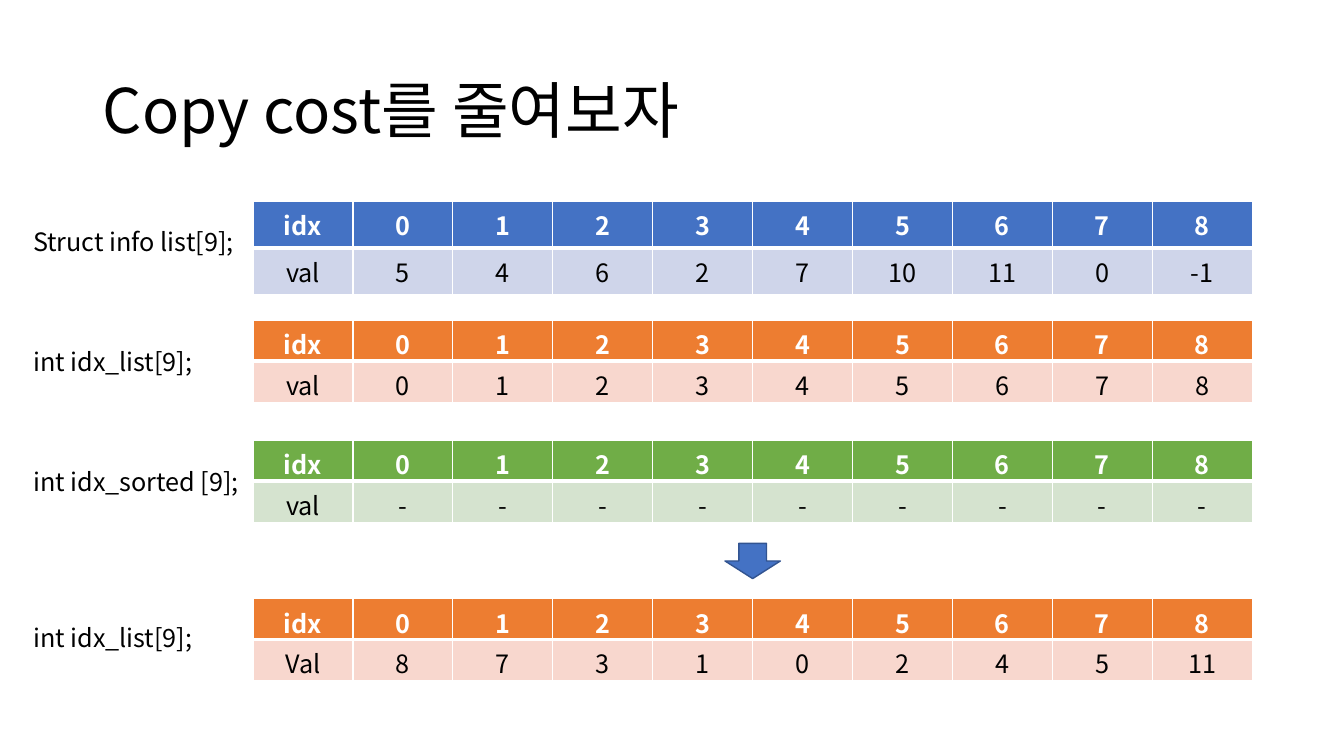
"""Build the slide on reducing copy cost by sorting an index list."""
from lxml import etree
from pptx import Presentation, util as u
from pptx.dml.color import RGBColor
from pptx.enum import shapes, text
from pptx.oxml.ns import qn

FONT = "Noto Sans CJK KR"
WHITE = RGBColor(0xFF, 0xFF, 0xFF)
BLACK = RGBColor(0, 0, 0)
BLUE = RGBColor(0x44, 0x72, 0xC4)
PALE_BLUE = RGBColor(0xCF, 0xD5, 0xEA)
DARK_BLUE = RGBColor(0x32, 0x54, 0x91)
ORANGE = RGBColor(0xED, 0x7D, 0x31)
PALE_ORANGE = RGBColor(0xF8, 0xD7, 0xCE)
GREEN = RGBColor(0x70, 0xAD, 0x47)
PALE_GREEN = RGBColor(0xD5, 0xE3, 0xCF)

HEADER = ["idx", *"012345678"]
ARRAYS = [
    ("Struct info list[9];", 2.2, 2.0, BLUE, PALE_BLUE,
     ["val", "5", "4", "6", "2", "7", "10", "11", "0", "-1"]),
    ("int idx_list[9];", 3.39, 3.18, ORANGE, PALE_ORANGE, ["val", *"012345678"]),
    ("int idx_sorted [9];", 4.58, 4.37, GREEN, PALE_GREEN, ["val"] + ["-"] * 9),
    ("int idx_list[9];", 6.12, 5.94, ORANGE, PALE_ORANGE,
     ["Val", "8", "7", "3", "1", "0", "2", "4", "5", "11"]),
]


def write(tf, words, size=18, color=BLACK, bold=False, align=text.PP_ALIGN.LEFT):
    tf.text = words
    p = tf.paragraphs[0]
    p.alignment = align
    r = p.runs[0]
    r.font.name = FONT
    r.font.size = u.Pt(size)
    r.font.bold = bold
    r.font.color.rgb = color
    etree.SubElement(r.font._element, qn("a:ea"), typeface=FONT)
    return p


def add_borders(cell, top, bottom):
    tc_pr = cell._tc.get_or_add_tcPr()
    for side, width in (("L", 1), ("R", 1), ("T", top), ("B", bottom)):
        ln = etree.SubElement(tc_pr, qn(f"a:ln{side}"), w=str(u.Pt(width)))
        fill = etree.SubElement(ln, qn("a:solidFill"))
        etree.SubElement(fill, qn("a:srgbClr"), val=str(WHITE))


def add_array(s, top, header_fill, value_fill, values):
    table = s.shapes.add_table(2, len(HEADER), u.Inches(2.51), u.Inches(top),
                               u.Inches(9.91), u.Inches(0.81)).table
    rows = (
        (HEADER, header_fill, WHITE, True, 1, 3),
        (values, value_fill, BLACK, False, 3, 1),
    )
    for i, (words, fill, color, bold, above, below) in enumerate(rows):
        for j, word in enumerate(words):
            cell = table.cell(i, j)
            write(cell.text_frame, word, color=color, bold=bold,
                  align=text.PP_ALIGN.CENTER)
            add_borders(cell, above, below)
            cell.fill.solid()
            cell.fill.fore_color.rgb = fill


def add_label(s, top, words):
    sp = s.shapes.add_textbox(u.Inches(0.23), u.Inches(top), u.Inches(2.28), u.Inches(0.4))
    tf = sp.text_frame
    tf.word_wrap = True
    tf.auto_size = text.MSO_AUTO_SIZE.SHAPE_TO_FIT_TEXT
    write(tf, words)


def add_down_arrow(s):
    sp = s.shapes.add_shape(shapes.MSO_SHAPE.DOWN_ARROW, u.Inches(7.19), u.Inches(5.39),
                            u.Inches(0.55), u.Inches(0.35))
    sp.shadow.inherit = False
    sp.fill.solid()
    sp.fill.fore_color.rgb = BLUE
    sp.line.color.rgb = DARK_BLUE
    sp.line.width = u.Pt(1)


def set_title(s, words):
    sp = s.shapes.title
    sp.left, sp.top = u.Inches(0.92), u.Inches(0.4)
    sp.width, sp.height = u.Inches(11.5), u.Inches(1.45)
    tf = sp.text_frame
    tf.vertical_anchor = text.MSO_ANCHOR.MIDDLE
    p = write(tf, words, size=44)
    p.line_spacing = 0.9


def main():
    prs = Presentation()
    prs.slide_width, prs.slide_height = u.Inches(13.33), u.Inches(7.5)
    s = prs.slides.add_slide(prs.slide_layouts[5])
    set_title(s, "Copy cost를 줄여보자")
    for label, label_top, table_top, header_fill, value_fill, values in ARRAYS:
        add_array(s, table_top, header_fill, value_fill, values)
        add_label(s, label_top, label)
    add_down_arrow(s)
    prs.save("out.pptx")


if __name__ == "__main__":
    main()
